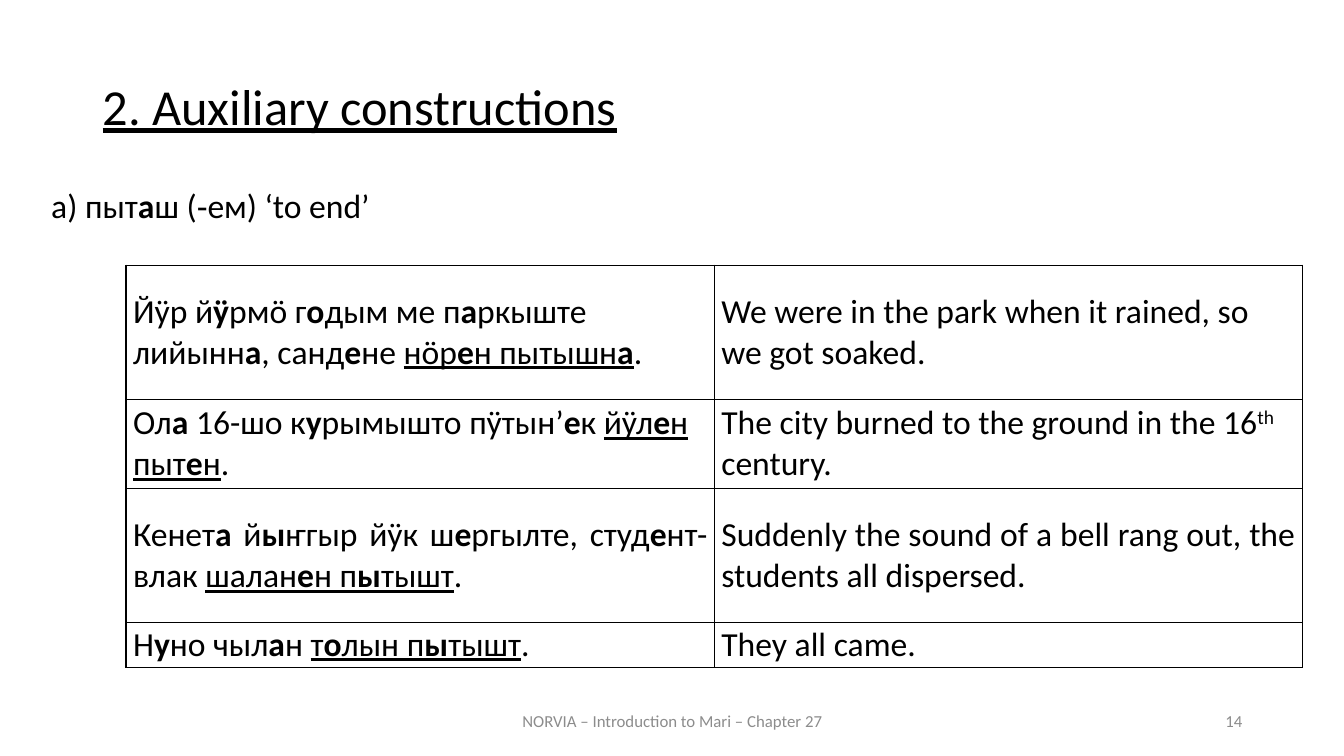
from itertools import product

from lxml.etree import SubElement
from pptx import Presentation
from pptx.dml.color import RGBColor
from pptx.enum.text import MSO_ANCHOR, PP_ALIGN
from pptx.oxml import parse_xml
from pptx.oxml.ns import nsdecls, qn
from pptx.util import Inches, Pt

BLACK = RGBColor(0, 0, 0)
GRAY = RGBColor(0x8C, 0x8C, 0x8C)
FONT = "Calibri"
MARKS = {"*": "bold", "_": "underline", "^": "superscript"}
LEFT, JUSTIFY = PP_ALIGN.LEFT, PP_ALIGN.JUSTIFY

EXAMPLES = [
    ("Йӱр й*ӱ*рмӧ г*о*дым ме п*а*ркыште лийынн*а*, санд*е*не _нӧр*е*н пытышн*а*_.",
     "We were in the park when it rained, so we got soaked.", 1.33, LEFT),
    ("Ол*а* 16-шо к*у*рымышто пӱтын’*е*к _йӱл*е*н пыт*е*н_.",
     "The city burned to the ground in the 16^th^ century.", 0.89, LEFT),
    ("Кенет*а* й*ы*ҥгыр йӱк ш*е*ргылте, студ*е*нт-влак _шалан*е*н п*ы*тышт_.",
     "Suddenly the sound of a bell rang out, the students all dispersed.", 1.33, JUSTIFY),
    ("Н*у*но чыл*а*н _т*о*лын п*ы*тышт_.", "They all came.", 0.44, JUSTIFY),
]


def split_marks(text):
    """Yield each stretch of text with the set of styles switched on by its marks."""
    active, stretch = set(), ""
    for letter in text:
        if letter not in MARKS:
            stretch += letter
            continue
        if stretch:
            yield stretch, set(active)
        active ^= {MARKS[letter]}
        stretch = ""
    if stretch:
        yield stretch, active


def write_text(frame, text, size=24, color=BLACK, align=LEFT, line_spacing=None):
    """Fill the first paragraph of a frame with marked-up text."""
    para = frame.paragraphs[0]
    para.alignment = align
    para.line_spacing = line_spacing
    for stretch, styles in split_marks(text):
        span = para.add_run()
        span.text = stretch
        span.font.name = FONT
        span.font.size = Pt(size)
        span.font.color.rgb = color
        span.font.bold = "bold" in styles
        span.font.underline = "underline" in styles
        if "superscript" in styles:
            span._r.get_or_add_rPr().set("baseline", "30000")


def add_text(page, place, text, anchor=MSO_ANCHOR.TOP, **text_format):
    """Add a wrapping text box."""
    box = page.shapes.add_textbox(*map(Inches, place))
    box.text_frame.word_wrap = True
    box.text_frame.vertical_anchor = anchor
    write_text(box.text_frame, text, **text_format)


def style_cell(cell):
    """Give a table cell its margins, clear fill and black borders."""
    cell.vertical_anchor = MSO_ANCHOR.MIDDLE
    cell.margin_left = cell.margin_right = Inches(0.07)
    cell.margin_top = cell.margin_bottom = 0
    cell.fill.background()
    properties = cell._tc.get_or_add_tcPr()
    for index, side in enumerate(("lnL", "lnR", "lnT", "lnB")):
        border = parse_xml(f'<a:{side} {nsdecls("a")} w="{Pt(1)}"/>')
        fill = SubElement(border, qn("a:solidFill"))
        SubElement(fill, qn("a:srgbClr"), val=str(BLACK))
        properties.insert(index, border)


def add_examples(page, place):
    """Add the table of sentences and their translations."""
    table = page.shapes.add_table(len(EXAMPLES), 2, *map(Inches, place)).table
    table.first_row = table.horz_banding = False
    for row, example in zip(table.rows, EXAMPLES):
        row.height = Inches(example[2])
    for row, column in product(range(len(EXAMPLES)), range(2)):
        cell = table.cell(row, column)
        style_cell(cell)
        write_text(cell.text_frame, EXAMPLES[row][column], align=EXAMPLES[row][3])


def main():
    """Build and save the slide."""
    deck = Presentation()
    deck.slide_width, deck.slide_height = Inches(13.33), Inches(7.5)
    page = deck.slides.add_slide(deck.slide_layouts[6])
    add_text(page, (0.92, 0.76, 11.5, 0.83), "_2. Auxiliary constructions_",
             size=36, align=JUSTIFY, line_spacing=0.9)
    add_text(page, (0.41, 1.79, 6.67, 0.5), "a) пыт*а*ш (‑ем) ‘to end’")
    add_examples(page, (1.25, 2.63, 11.67, 3.99))
    footer = {"anchor": MSO_ANCHOR.MIDDLE, "size": 12, "color": GRAY}
    add_text(page, (4.42, 6.95, 4.5, 0.4), "NORVIA – Introduction to Mari – Chapter 27",
             align=PP_ALIGN.CENTER, **footer)
    add_text(page, (9.42, 6.95, 3, 0.4), "14", align=PP_ALIGN.RIGHT, **footer)
    deck.save("out.pptx")


if __name__ == "__main__":
    main()
